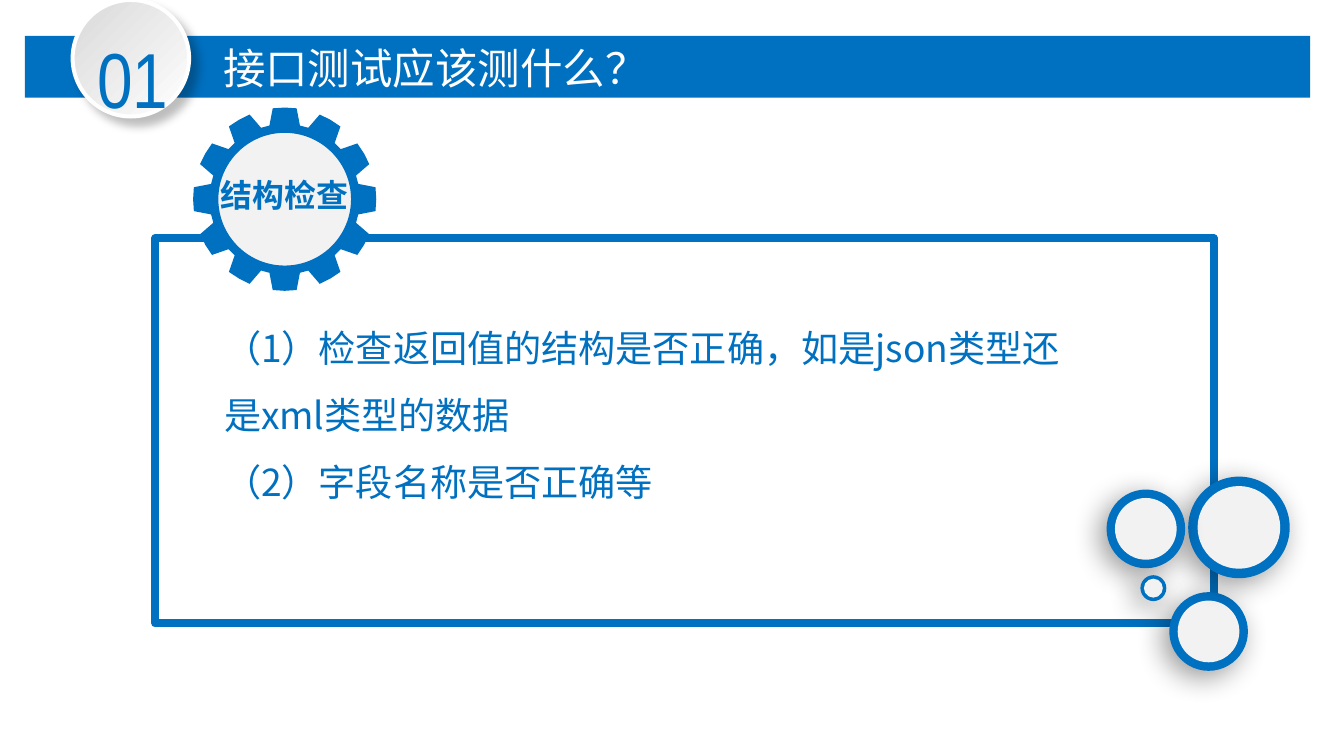
from math import cos, radians, sin

from lxml import etree
from pptx import Presentation
from pptx.dml.color import RGBColor
from pptx.enum.shapes import MSO_SHAPE
from pptx.enum.text import MSO_ANCHOR, MSO_AUTO_SIZE, PP_ALIGN
from pptx.oxml.ns import qn
from pptx.util import Pt

RECT, OVAL = MSO_SHAPE.RECTANGLE, MSO_SHAPE.OVAL
LEFT, CENTER = PP_ALIGN.LEFT, PP_ALIGN.CENTER
TOP, MIDDLE = MSO_ANCHOR.TOP, MSO_ANCHOR.MIDDLE
GROW = MSO_AUTO_SIZE.SHAPE_TO_FIT_TEXT

PX = 9525
SIZE = (1350, 759)
HAN, NARROW = "Noto Sans CJK SC", "Arial Narrow"
COLORS = {"blue": "0070C0", "white": "FFFFFF", "pale": "F2F2F2",
          "gray": "D9D9D9", "black": "000000"}

TITLE = ["接口测试应该测什么？"]
NUMBER = ["01"]
LABEL = ["结构检查"]
CHECKS = ["（1）检查返回值的结构是否正确，如是json类型还是xml类型的数据",
          "（2）字段名称是否正确等"]

BAR = (25, 36, 1291, 62)
FRAME = (156, 239, 1063, 387)
BADGE = (73, 0, 117, 117)
GEAR = {"mid": (286, 200), "teeth": 12, "hub": 68,
        "tooth": [(-11.7, 75.5), (-7.5, 92), (0, 92), (7.5, 92), (11.7, 75.5)]}
BUBBLES = [(1176, 596, 76, 7), (1195, 480, 99, 8),
           (1113, 493, 76, 7), (1147, 579, 23, 2)]
DEEP = (40, 22, 7, 135)
SOFT = (25, 7, 8, 45)


def rgb(name):
    return RGBColor.from_string(COLORS[name])


def paint(shape, fill=None, line=None, width=1):
    shape.shadow.inherit = False
    if fill:
        shape.fill.solid()
        shape.fill.fore_color.rgb = rgb(fill)
    else:
        shape.fill.background()
    if line:
        shape.line.color.rgb = rgb(line)
        shape.line.width = Pt(width)
    else:
        shape.line.fill.background()
    return shape


def add(kind, box, *look):
    shape = slide.shapes.add_shape(kind, *(n * PX for n in box))
    return paint(shape, *look)


def shade(shape, alpha, blur, dist, angle):
    effects = shape._element.spPr.find(qn("a:effectLst"))
    outer = etree.SubElement(effects, qn("a:outerShdw"), blurRad=str(Pt(blur)),
                             dist=str(Pt(dist)), dir=str(angle * 60000),
                             algn="ctr", rotWithShape="0")
    tint = etree.SubElement(outer, qn("a:srgbClr"), val=COLORS["black"])
    etree.SubElement(tint, qn("a:alpha"), val=str(alpha * 1000))


def write(box, lines, size, color, font=HAN, bold=False, align=LEFT,
          anchor=TOP, pad=(10, 5), space=None, fit=GROW):
    frame = slide.shapes.add_textbox(*(n * PX for n in box)).text_frame
    frame.word_wrap = True
    frame.auto_size = fit
    frame.vertical_anchor = anchor
    frame.margin_left = frame.margin_right = pad[0] * PX
    frame.margin_top = frame.margin_bottom = pad[1] * PX
    for i, line in enumerate(lines):
        para = frame.add_paragraph() if i else frame.paragraphs[0]
        para.alignment = align
        if space:
            para.line_spacing = space
        run = para.add_run()
        run.text = line
        run.font.name = font
        run.font.size = Pt(size)
        run.font.bold = bold
        run.font.color.rgb = rgb(color)
        etree.SubElement(run.font._element, qn("a:ea"), typeface=font)


def draw_gear():
    x, y = GEAR["mid"]
    step = 360 / GEAR["teeth"]
    points = []
    for i in range(GEAR["teeth"]):
        for turn, reach in GEAR["tooth"]:
            angle = radians(i * step + turn)
            points.append((round((x + reach * sin(angle)) * PX),
                           round((y - reach * cos(angle)) * PX)))
    path = slide.shapes.build_freeform(*points[0], scale=1.0)
    path.add_line_segments(points[1:], close=True)
    paint(path.convert_to_shape(), "blue")
    hub = GEAR["hub"]
    add(OVAL, (x - hub, y - hub, 2 * hub, 2 * hub), "pale", "blue", 2)


def draw_badge():
    badge = add(OVAL, BADGE, "gray", "white", 3)
    badge.fill.gradient()
    badge.fill.gradient_angle = 315
    for stop, name, place in zip(badge.fill.gradient_stops, ("gray", "white"), (0, 1)):
        stop.color.rgb = rgb(name)
        stop.position = place
    shade(badge, *SOFT)


deck = Presentation()
deck.slide_width, deck.slide_height = (n * PX for n in SIZE)
slide = deck.slides.add_slide(deck.slide_layouts[6])
slide.background.fill.solid()
slide.background.fill.fore_color.rgb = rgb("white")

add(RECT, BAR, "blue")
write((214, 32, 499, 72), TITLE, 32, "white", anchor=MIDDLE, fit=MSO_AUTO_SIZE.NONE)
add(RECT, FRAME, None, "blue", 6)
write((213, 297, 888, 217), CHECKS, 28, "blue", pad=(12, 7), space=1.5)
draw_gear()
write((208, 176, 156, 38), LABEL, 24, "blue", bold=True, align=CENTER, pad=(0, 0))
for x, y, wide, ring in BUBBLES:
    shade(add(OVAL, (x, y, wide, wide), "blue", "blue", 2.25), *DEEP)
    core = wide - 2 * ring
    add(OVAL, (x + ring, y + ring, core, core), "pale")
draw_badge()
write((80, 26, 107, 105), NUMBER, 58.7, "blue", NARROW, align=CENTER)

deck.save("out.pptx")
